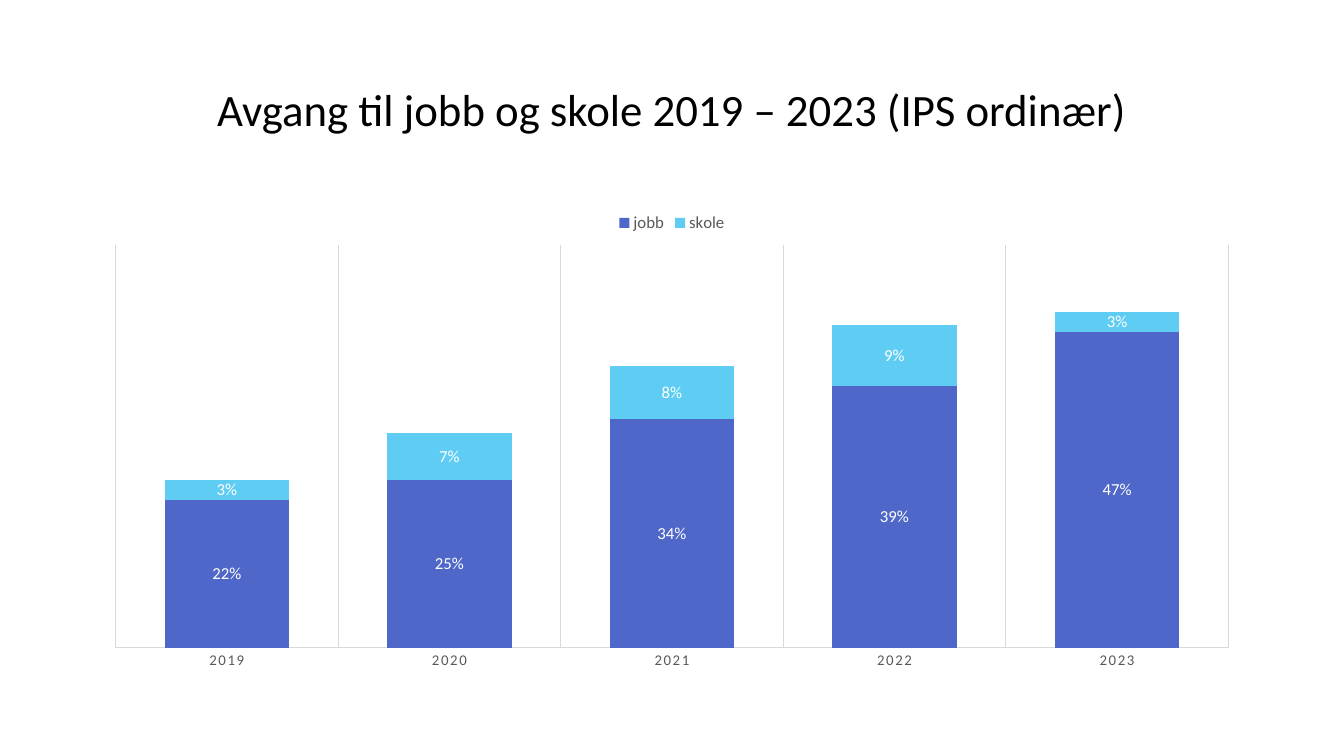
from lxml import etree
from pptx import Presentation
from pptx import util as u
from pptx.chart.data import CategoryChartData
from pptx.dml.color import RGBColor
from pptx.enum import chart as ch, text
from pptx.oxml.ns import qn

PX = 9525  # EMU per px, 96 px to the inch
FONT = "Calibri"
COLORS = {"title": "000000", "label": "FFFFFF", "axis": "595959",
          "line": "D9D9D9", "jobb": "4E67C8", "skole": "5ECCF3"}
YEARS = ["2019", "2020", "2021", "2022", "2023"]
SHARES = {"jobb": [0.22, 0.25, 0.34, 0.39, 0.47],
          "skole": [0.03, 0.07, 0.08, 0.09, 0.03]}


def px(*lengths):
    return [n * PX for n in lengths]


def rgb(name):
    return RGBColor.from_string(COLORS[name])


def style_font(font, size, color):
    font.name = FONT
    font.size = u.Pt(size)
    font.color.rgb = rgb(color)


def style_line(line):
    line.color.rgb = rgb("line")
    line.width = u.Pt(0.75)


def add_title(s, box, words):
    tf = s.shapes.add_textbox(*px(*box)).text_frame
    tf.word_wrap = True
    tf.vertical_anchor = text.MSO_ANCHOR.MIDDLE
    p = tf.paragraphs[0]
    p.alignment = text.PP_ALIGN.CENTER
    p.line_spacing = 0.9
    r = p.add_run()
    r.text = words
    style_font(r.font, 32, "title")


def set_plot_area(chart, **fractions):
    plot_area = chart.plots[0]._element.getparent()
    layout = plot_area.find(qn("c:layout"))
    if layout is None:
        layout = etree.Element(qn("c:layout"))
        plot_area.insert(0, layout)
    manual = etree.SubElement(layout, qn("c:manualLayout"))
    settings = {"layoutTarget": "inner", "xMode": "edge", "yMode": "edge"}
    for tag, val in {**settings, **fractions}.items():
        etree.SubElement(manual, qn(f"c:{tag}")).set("val", str(val))


def add_stacked_chart(s, box):
    data = CategoryChartData(number_format="0%")
    data.categories = YEARS
    for name, values in SHARES.items():
        data.add_series(name, values)
    chart = s.shapes.add_chart(
        ch.XL_CHART_TYPE.COLUMN_STACKED, *px(*box), data).chart
    style_font(chart.font, 10, "title")
    chart.has_title = False
    set_plot_area(chart, x=0.02, y=0.09, w=0.96, h=0.84)

    # Legend
    chart.has_legend = True
    chart.legend.position = ch.XL_LEGEND_POSITION.TOP
    chart.legend.include_in_layout = False
    style_font(chart.legend.font, 12, "axis")

    # Axes
    years = chart.category_axis
    years.major_tick_mark = ch.XL_TICK_MARK.NONE
    years.has_major_gridlines = True
    style_line(years.major_gridlines.format.line)
    style_line(years.format.line)
    style_font(years.tick_labels.font, 10.6, "axis")
    years.tick_labels.font._rPr.set("spc", "120")
    shares = chart.value_axis
    shares.minimum_scale, shares.maximum_scale = 0, 0.6
    shares.has_major_gridlines = False
    shares.tick_labels.number_format = "0%"
    shares.tick_labels.number_format_is_linked = False
    shares.visible = False

    # Columns and their labels
    plot = chart.plots[0]
    plot.gap_width, plot.overlap = 79, 100
    plot.vary_by_categories = False
    for series in plot.series:
        series.format.fill.solid()
        series.format.fill.fore_color.rgb = rgb(series.name)
        labels = series.data_labels
        labels.show_value = True
        labels.position = ch.XL_LABEL_POSITION.CENTER
        labels.number_format = "0%"
        labels.number_format_is_linked = False
        style_font(labels.font, 12, "label")


def main():
    prs = Presentation()
    prs.slide_width, prs.slide_height = px(1280, 720)
    s = prs.slides.add_slide(prs.slide_layouts[6])
    add_title(s, (88, 51, 1104, 112),
              "Avgang til jobb og skole 2019 – 2023 (IPS ordinær)")
    add_stacked_chart(s, (88, 192, 1104, 457))
    prs.save("out.pptx")


if __name__ == "__main__":
    main()
